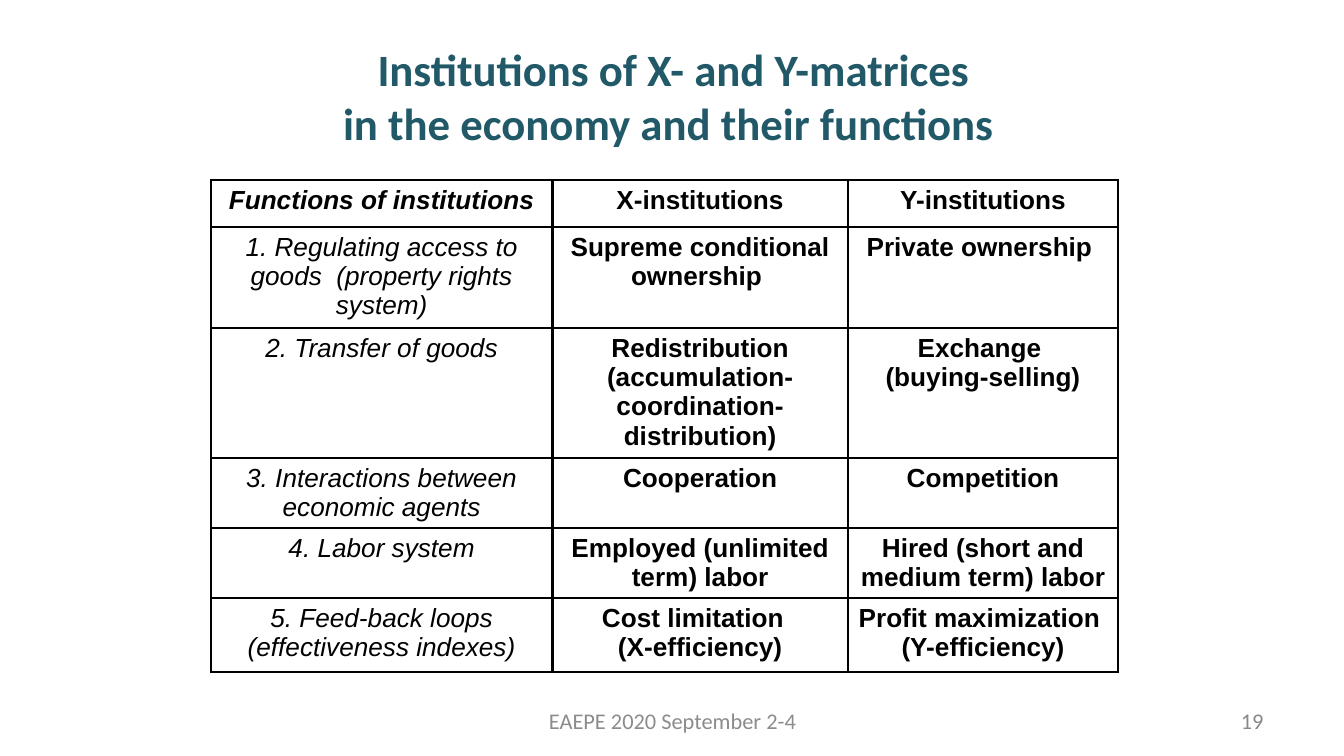
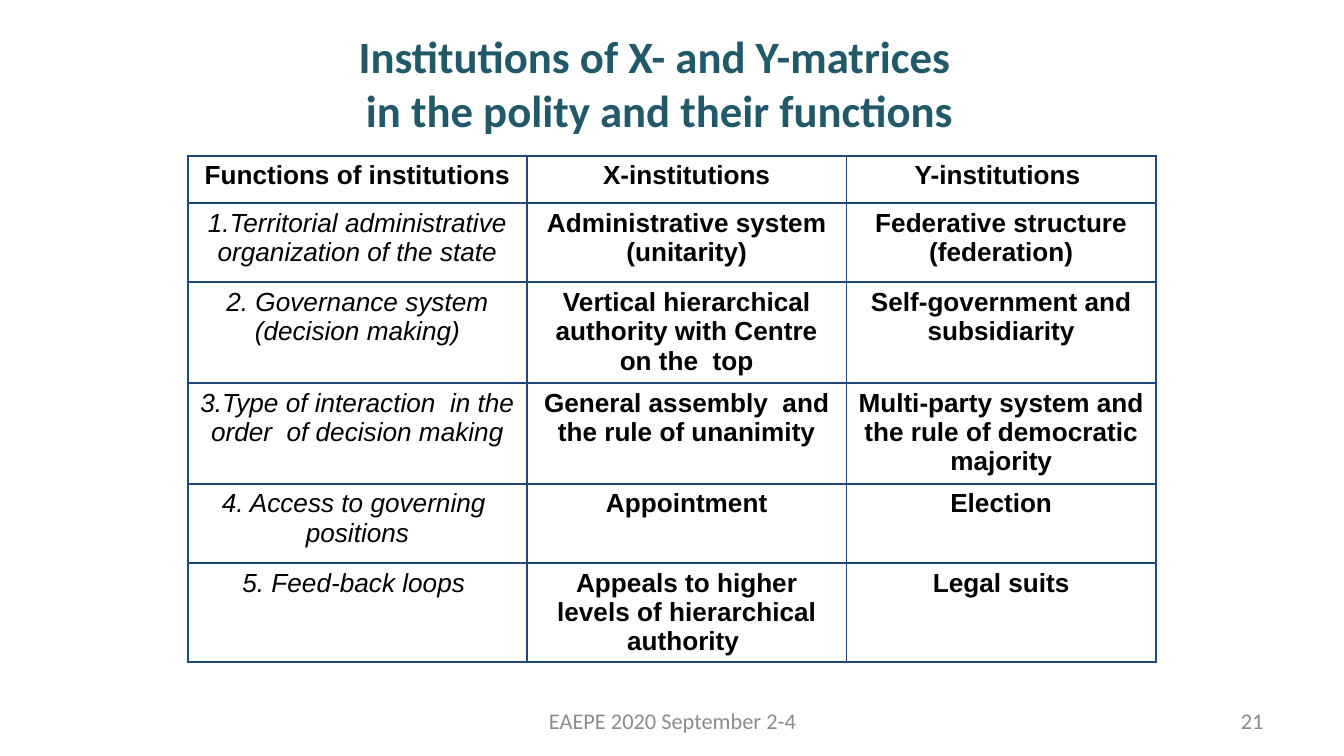
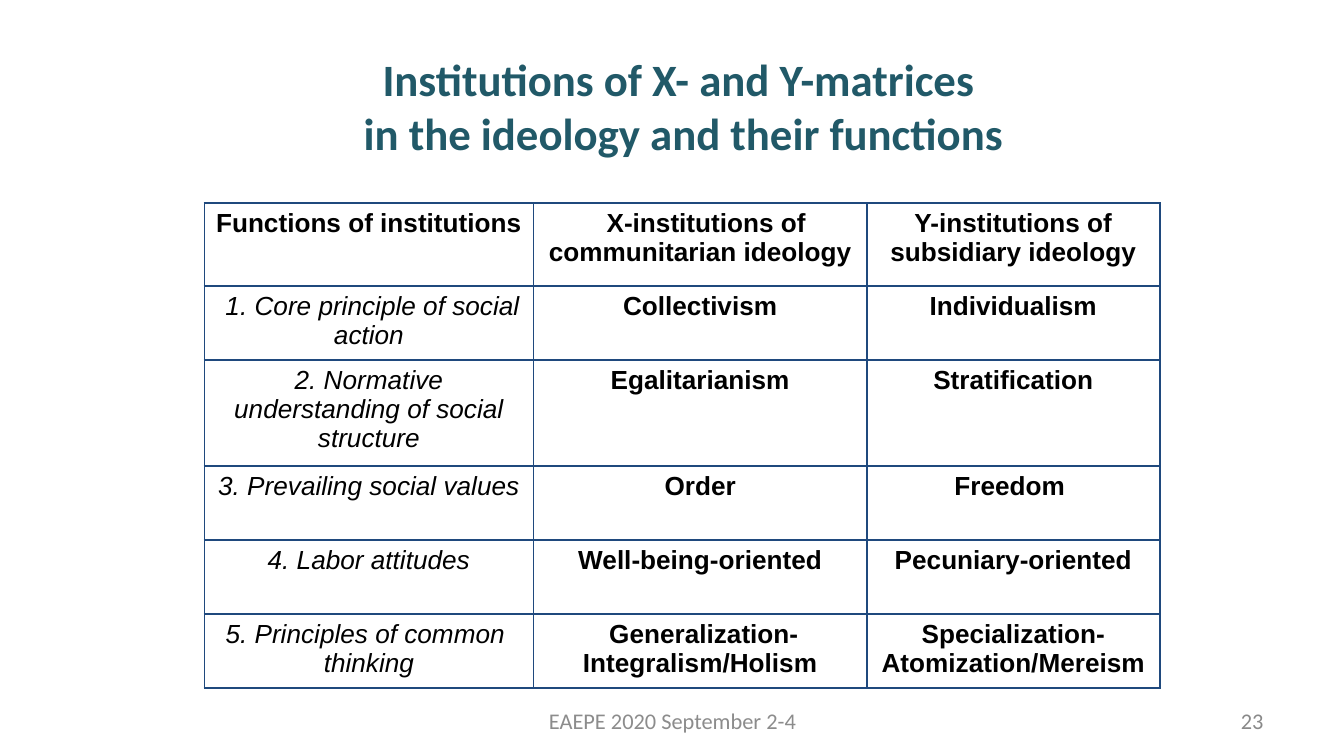
"""Build three slides comparing institutions of X- and Y-matrices."""
from dataclasses import dataclass

from lxml.etree import SubElement as Sub
from pptx import Presentation
from pptx.dml.color import RGBColor
from pptx.enum.text import MSO_ANCHOR as Anchor, MSO_AUTO_SIZE as Fit, PP_ALIGN as Align
from pptx.oxml.ns import qn
from pptx.util import Inches, Pt

WIDTH = 10
HEIGHT = WIDTH * 9 / 16

TEAL = RGBColor(0x21, 0x59, 0x68)
BLACK = RGBColor(0, 0, 0)
NAVY = RGBColor(0x1F, 0x49, 0x7D)
GREY = RGBColor(0x89, 0x89, 0x89)
SILVER = RGBColor(0x8C, 0x8C, 0x8C)

TITLE = {"name": "Calibri", "size": Pt(24), "bold": True}
SMALL = {"name": "Calibri", "size": Pt(12)}
STRONG = {"name": "Arial", "size": Pt(14), "bold": True, "italic": False}
SLANT = STRONG | {"bold": False, "italic": True}
FRAME = {"word_wrap": True, "auto_size": Fit.NONE, "vertical_anchor": Anchor.MIDDLE}
CELL = {
    "margin_left": Inches(0.07), "margin_right": Inches(0.07),
    "margin_top": Inches(0.04), "margin_bottom": Inches(0.04),
    "vertical_anchor": Anchor.TOP,
}
PLAIN = {"first_row": False, "horz_banding": False}
FOOTER = "EAEPE 2020 September 2-4"


@dataclass(frozen=True)
class Box:
    left: float
    top: float
    width: float
    height: float

    def sides(self) -> list:
        return [Inches(n) for n in (self.left, self.top, self.width, self.height)]


@dataclass(frozen=True)
class Grid:
    left: float
    top: float
    cols: tuple
    rows: tuple
    cells: tuple
    edge: RGBColor = NAVY
    weight: float = 1
    head: dict | None = None
    indent: float = 0


@dataclass(frozen=True)
class Page:
    number: int
    title: str
    place: Box
    grid: Grid


FOOT_BOX = Box(3.42, 5.21, 3.17, 0.3)
PAGE_BOX = Box(7.17, 5.21, 2.33, 0.3)

PAGES = (
    Page(
        19,
        " Institutions of X- and Y-matrices \nin the economy and their functions ",
        Box(1.57, 0.21, 6.88, 1),
        Grid(
            1.57, 1.34, (2.54, 2.2, 2.01), (0.35, 0.75, 0.97, 0.52, 0.52, 0.55),
            (
                ("Functions of institutions", "X-institutions", "Y-institutions"),
                ("1. Regulating access to goods  (property rights system)",
                 "Supreme conditional ownership ", "Private ownership "),
                ("2. Transfer of goods",
                 "Redistribution (accumulation-coordination-distribution)",
                 "Exchange \n(buying-selling)"),
                ("3. Interactions between economic agents", "Cooperation", "Competition"),
                ("4. Labor system", "Employed (unlimited term) labor",
                 "Hired (short and medium term) labor"),
                ("5. Feed-back loops (effectiveness indexes)",
                 "Cost limitation  \n(Х-efficiency)",
                 "Profit maximization \n(Y-efficiency)"),
            ),
            edge=BLACK, weight=1.5, head=STRONG | {"italic": True},
        ),
    ),
    Page(
        21,
        "Institutions of X- and Y-matrices  \nin the polity and their functions ",
        Box(1.57, 0.15, 6.75, 0.93),
        Grid(
            1.4, 1.16, (2.52, 2.38, 2.3), (0.35, 0.59, 0.75, 0.75, 0.59, 0.59),
            (
                ("Functions of institutions", "X-institutions", "Y-institutions "),
                ("1.Territorial administrative organization of the state",
                 "Administrative system (unitarity)",
                 "Federative structure (federation)"),
                ("2. Governance system (decision making)",
                 "Vertical hierarchical authority with Centre on the  top",
                 "Self-government and subsidiarity"),
                ("3.Type of interaction  in the order  of decision making",
                 "General assembly  and the rule of unanimity",
                 "Multi-party system and the rule of democratic majority"),
                ("4. Access to governing  positions", "Appointment", "Election"),
                ("5. Feed-back loops ",
                 "Appeals to higher levels of hierarchical authority ", "Legal suits"),
            ),
        ),
    ),
    Page(
        23,
        "Institutions of X- and Y-matrices \nin the ideology and their functions",
        Box(0.5, 0.2, 9.17, 1.17),
        Grid(
            1.52, 1.51, (2.45, 2.48, 2.18), (0.62, 0.55, 0.79, 0.55, 0.55, 0.55),
            (
                ("Functions of institutions", "X-institutions of communitarian ideology",
                 "Y-institutions of subsidiary ideology"),
                (" 1. Core principle of social action", "Collectivism", "Individualism"),
                ("2. Normative understanding of social structure",
                 "Egalitarianism", "Stratification"),
                ("3. Prevailing social values", "Order", "Freedom "),
                ("4. Labor attitudes", "Well-being-oriented", "Pecuniary-oriented"),
                ("5. Principles of common  thinking",
                 " Generalization-Integralism/Holism",
                 "Specialization-Atomization/Mereism"),
            ),
            indent=0.09,
        ),
    ),
)


def apply(item, form: dict) -> None:
    for name, value in form.items():
        setattr(item, name, value)


def style(frame, form: dict, color: RGBColor, align=Align.CENTER) -> None:
    for para in frame.paragraphs:
        para.alignment = align
        for run in para.runs:
            apply(run.font, form)
            run.font.color.rgb = color


def add_title(slide, page: Page) -> None:
    shape = slide.shapes.title
    shape.left, shape.top, shape.width, shape.height = page.place.sides()
    frame = shape.text_frame
    apply(frame, FRAME)
    para = frame.paragraphs[0]
    para.text = page.title
    for gap in para._p.findall(qn("a:br")):
        Sub(gap, qn("a:rPr"), sz=str(int(TITLE["size"].pt * 100)))
    style(frame, TITLE, TEAL)


def add_note(slide, box: Box, text: str, color: RGBColor, align=Align.CENTER) -> None:
    frame = slide.shapes.add_textbox(*box.sides()).text_frame
    apply(frame, FRAME)
    frame.text = text
    style(frame, SMALL, color, align)


def add_edges(cell, grid: Grid) -> None:
    props = cell._tc.get_or_add_tcPr()
    for side in "LRTB":
        line = Sub(props, qn(f"a:ln{side}"), w=str(Pt(grid.weight)))
        Sub(Sub(line, qn("a:solidFill")), qn("a:srgbClr"), val=str(grid.edge))


def add_grid(slide, grid: Grid) -> None:
    box = Box(grid.left, grid.top, sum(grid.cols), sum(grid.rows))
    table = slide.shapes.add_table(len(grid.rows), len(grid.cols), *box.sides()).table
    apply(table, PLAIN)
    for col, width in zip(table.columns, grid.cols):
        col.width = Inches(width)
    for row, height in zip(table.rows, grid.rows):
        row.height = Inches(height)
    for r, texts in enumerate(grid.cells):
        for c, text in enumerate(texts):
            cell = table.cell(r, c)
            apply(cell, CELL)
            add_edges(cell, grid)
            cell.fill.background()
            cell.text_frame.text = text
            first = SLANT if r else grid.head or STRONG
            style(cell.text_frame, STRONG if c else first, BLACK)
    if grid.indent:
        para = table.cell(0, 1).text_frame.paragraphs[0]
        para._p.get_or_add_pPr().set("indent", str(Inches(grid.indent)))


def main() -> None:
    deck = Presentation()
    deck.slide_width, deck.slide_height = Inches(WIDTH), Inches(HEIGHT)
    for page in PAGES:
        slide = deck.slides.add_slide(deck.slide_layouts[5])
        add_title(slide, page)
        add_note(slide, PAGE_BOX, str(page.number), GREY, Align.RIGHT)
        add_grid(slide, page.grid)
        add_note(slide, FOOT_BOX, FOOTER, SILVER)
    deck.save("out.pptx")


if __name__ == "__main__":
    main()
